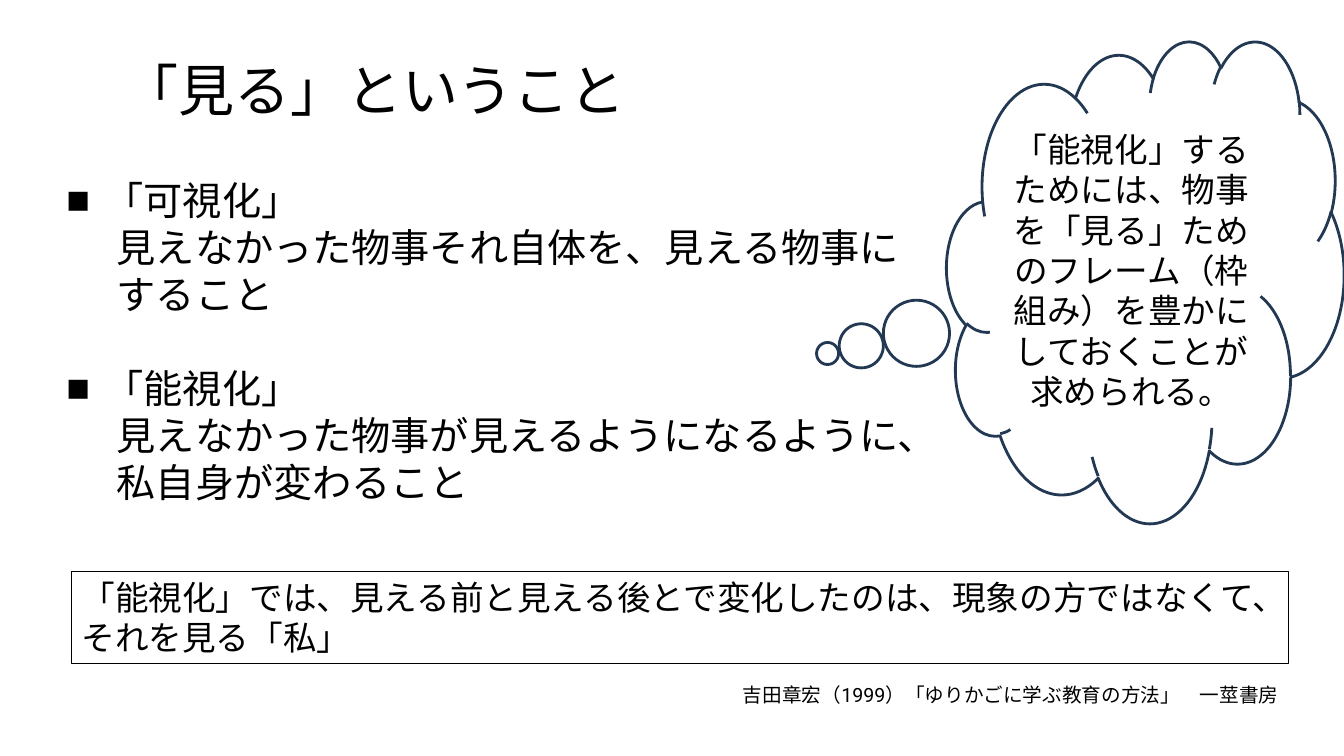
import pptx
import pptx.util
import pptx.dml.color
import pptx.enum.shapes
import pptx.enum.text
import pptx.oxml.ns
from lxml import etree

Inches = pptx.util.Inches
Pt = pptx.util.Pt
ALIGN = pptx.enum.text.PP_ALIGN
ANCHOR = pptx.enum.text.MSO_ANCHOR
SHAPE = pptx.enum.shapes.MSO_SHAPE
qn = pptx.oxml.ns.qn

FONT = "Roboto"
COLORS = {"ink": "000000", "cloud": "233953"}
DEFINITIONS = [
    ("「可視化」", "見えなかった物事それ自体を、見える物事にすること"),
    ("「能視化」", "見えなかった物事が見えるようになるように、私自身が変わること"),
]


def rgb(name):
    return pptx.dml.color.RGBColor.from_string(COLORS[name])


def add_run(paragraph, text, size):
    run = paragraph.add_run()
    run.text = text
    run.font.size = Pt(size)
    run.font.name = FONT
    run.font.color.rgb = rgb("ink")
    east_asian = etree.SubElement(run.font._element, qn("a:ea"))
    east_asian.set("typeface", FONT)


def set_indent(paragraph, left, first=0, bullet=None):
    """Set the indents in inches and an optional bullet character."""
    properties = paragraph._p.get_or_add_pPr()
    properties.set("marL", str(Inches(left)))
    properties.set("indent", str(Inches(first)))
    if bullet:
        etree.SubElement(properties, qn("a:buFont")).set("typeface", "Arial")
        etree.SubElement(properties, qn("a:buChar")).set("char", bullet)
    else:
        etree.SubElement(properties, qn("a:buNone"))


def add_text(slide, box, text, size, align, anchor=ANCHOR.TOP):
    frame = slide.shapes.add_textbox(*map(Inches, box)).text_frame
    frame.word_wrap = True
    frame.vertical_anchor = anchor
    frame.paragraphs[0].alignment = align
    add_run(frame.paragraphs[0], text, size)


def add_definitions(slide, box):
    frame = slide.shapes.add_textbox(*map(Inches, box)).text_frame
    frame.word_wrap = True
    for index, (term, meaning) in enumerate(DEFINITIONS):
        heading = frame.add_paragraph() if index else frame.paragraphs[0]
        set_indent(heading, 0.38, -0.38, "■")
        if index:
            heading.space_before = Pt(33.5)
        add_run(heading, term, 28)
        explanation = frame.add_paragraph()
        explanation.level = 1
        set_indent(explanation, 0.5)
        add_run(explanation, meaning, 28)


def add_outlined(slide, kind, box, line, text, align, anchor):
    """Add an unfilled shape with 24 pt text; line is (colour, width)."""
    shape = slide.shapes.add_shape(kind, *map(Inches, box))
    shape.shadow.inherit = False
    shape.fill.background()
    shape.line.color.rgb = rgb(line[0])
    shape.line.width = Pt(line[1])
    frame = shape.text_frame
    frame.word_wrap = True
    frame.vertical_anchor = anchor
    frame.paragraphs[0].alignment = align
    add_run(frame.paragraphs[0], text, 24)
    return shape


def add_conclusion(slide, box):
    add_outlined(slide, SHAPE.RECTANGLE, box, ("ink", 0.75),
                 "「能視化」では、見える前と見える後とで変化したのは、現象の方ではなくて、それを見る「私」",
                 ALIGN.LEFT, ANCHOR.TOP)


def add_thought(slide, box):
    cloud = add_outlined(slide, SHAPE.CLOUD_CALLOUT, box, ("cloud", 2),
                         "「能視化」するためには、物事を「見る」ためのフレーム（枠組み）を豊かにしておくことが求められる。",
                         ALIGN.CENTER, ANCHOR.MIDDLE)
    cloud.adjustments[0] = -0.8
    cloud.adjustments[1] = 0.15


def main():
    deck = pptx.Presentation()
    deck.slide_width = Inches(13.33)
    deck.slide_height = Inches(7.5)
    slide = deck.slides.add_slide(deck.slide_layouts[6])
    add_text(slide, (0.92, 0.4, 5.58, 0.96), "「見る」ということ", 40,
             ALIGN.CENTER, ANCHOR.MIDDLE)
    add_definitions(slide, (0.56, 1.7, 8.84, 3.4))
    add_text(slide, (6.19, 6.73, 6.59, 0.34),
             "吉田章宏（1999）「ゆりかごに学ぶ教育の方法」　一莖書房", 14, ALIGN.RIGHT)
    add_conclusion(slide, (0.71, 5.67, 12.07, 0.91))
    add_thought(slide, (9.39, 0.4, 3.94, 4.78))
    deck.save("out.pptx")


if __name__ == "__main__":
    main()
